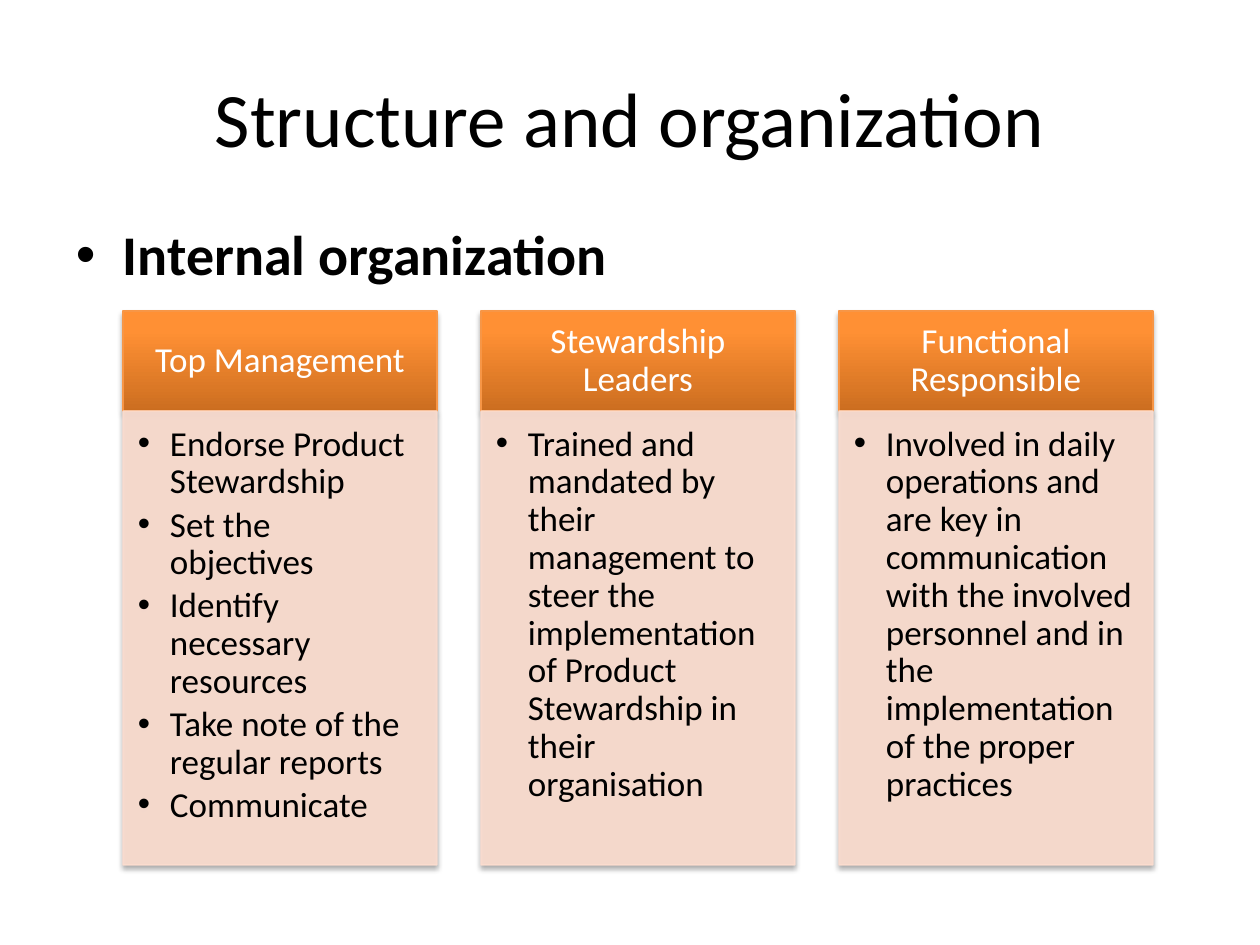
import pptx
import pptx.util
import pptx.dml.color
import pptx.enum.shapes
import pptx.enum.text
import pptx.oxml
import pptx.oxml.ns

TITLE = "Structure and organization"
SUBTITLE = "Internal organization"
ROLES = [
    ("Top Management", [
        "Endorse Product Stewardship",
        "Set the objectives",
        "Identify necessary resources",
        "Take note of the regular reports",
        "Communicate",
    ]),
    ("Stewardship Leaders", [
        "Trained and mandated by their management to steer the implementation "
        "of Product Stewardship in their organisation",
    ]),
    ("Functional Responsible", [
        "Involved in daily operations and are key in communication with the involved "
        "personnel and in the implementation of the proper practices",
    ]),
]

THEME = {
    "font": "Calibri", "title": 44, "subtitle": 32, "role": 20,
    "text": "000000", "head_text": "FFFFFF", "shadow": "000000",
    "head_line": "F79646", "duty_fill": "FCDDCF",
    "gradient": [(0, "CC6E20"), (80, "FF9034"), (100, "FF9136")],
}
PX = 914400 / 126
COLUMN_LEFT, COLUMN_WIDTH, COLUMN_PITCH = 123, 314, 358
HEAD_TOP, HEAD_HEIGHT, DUTY_HEIGHT = 311, 100, 454
ALIGN = pptx.enum.text.PP_ALIGN
ANCHOR = pptx.enum.text.MSO_ANCHOR


def px(length):
    return round(length * PX)


def rgb(key):
    return pptx.dml.color.RGBColor.from_string(THEME[key])


def xml(markup):
    return pptx.oxml.parse_xml(markup.replace(">", f" {pptx.oxml.ns.nsdecls('a')}>", 1))


def write(shape, lines, size, color="text", bold=False, align=ALIGN.LEFT,
          anchor=ANCHOR.TOP, insets=(13, 6, 13, 6), indent=0, spacing=1, before=0, after=0):
    frame = shape.text_frame
    frame.text = "\n".join(lines)
    frame.word_wrap = True
    frame.vertical_anchor = anchor
    (frame.margin_left, frame.margin_top,
     frame.margin_right, frame.margin_bottom) = map(px, insets)
    for paragraph in frame.paragraphs:
        paragraph.alignment = align
        paragraph.line_spacing = spacing
        paragraph.space_before = pptx.util.Pt(before)
        paragraph.space_after = pptx.util.Pt(after)
        font = paragraph.runs[0].font
        font.name, font.size, font.bold = THEME["font"], pptx.util.Pt(THEME[size]), bold
        font.color.rgb = rgb(color)
        if indent:
            properties = paragraph._p.get_or_add_pPr()
            properties.set("marL", str(px(indent)))
            properties.set("indent", str(-px(indent)))
            properties.append(xml('<a:buFont typeface="Arial"/>'.replace("/>", "></a:buFont>")))
            properties.append(xml('<a:buChar char="•"></a:buChar>'))


def add_panel(slide, left, top, height, line):
    panel = slide.shapes.add_shape(pptx.enum.shapes.MSO_SHAPE.RECTANGLE,
                                   px(left), px(top), px(COLUMN_WIDTH), px(height))
    panel.shadow.inherit = False
    panel.fill.solid()
    panel.fill.fore_color.rgb = rgb("duty_fill")
    panel.line.color.rgb = rgb(line)
    panel.line.width = pptx.util.Pt(0.75)
    effects = panel._element.spPr.find(pptx.oxml.ns.qn("a:effectLst"))
    effects.append(xml(
        '<a:outerShdw blurRad="39370" dist="22860" dir="5400000" rotWithShape="0">'
        f'<a:srgbClr val="{THEME["shadow"]}"><a:alpha val="35000"/></a:srgbClr></a:outerShdw>'))
    return panel


def add_head(slide, left, role):
    head = add_panel(slide, left, HEAD_TOP, HEAD_HEIGHT, "head_line")
    stops = "".join(f'<a:gs pos="{position * 1000}"><a:srgbClr val="{color}"/></a:gs>'
                    for position, color in THEME["gradient"])
    properties = head._element.spPr
    properties.replace(properties.find(pptx.oxml.ns.qn("a:solidFill")), xml(
        f'<a:gradFill rotWithShape="1"><a:gsLst>{stops}</a:gsLst>'
        '<a:lin ang="16200000" scaled="0"/></a:gradFill>'))
    write(head, [role], "role", "head_text", align=ALIGN.CENTER, anchor=ANCHOR.MIDDLE,
          insets=(20, 11, 20, 11), spacing=0.9)


def add_duties(slide, left, duties):
    panel = add_panel(slide, left, HEAD_TOP + HEAD_HEIGHT, DUTY_HEIGHT, "duty_fill")
    for fill in panel._element.spPr.iter(pptx.oxml.ns.qn("a:solidFill")):
        fill[0].append(xml('<a:alpha val="90000"></a:alpha>'))
    write(panel, duties, "role", insets=(15, 15, 20, 21), indent=32, spacing=0.9, after=3)


def main():
    deck = pptx.Presentation()
    deck.slide_width, deck.slide_height = px(1260), px(945)
    slide = deck.slides.add_slide(deck.slide_layouts[6])

    title = slide.shapes.add_textbox(px(63), px(38), px(1134), px(158))
    write(title, [TITLE], "title", align=ALIGN.CENTER, anchor=ANCHOR.MIDDLE)
    subtitle = slide.shapes.add_textbox(px(63), px(221), px(1134), px(624))
    write(subtitle, [SUBTITLE], "subtitle", bold=True, indent=47, spacing=0.9, before=3)

    for column, (role, duties) in enumerate(ROLES):
        left = COLUMN_LEFT + column * COLUMN_PITCH
        add_head(slide, left, role)
        add_duties(slide, left, duties)

    deck.save("out.pptx")


if __name__ == "__main__":
    main()
